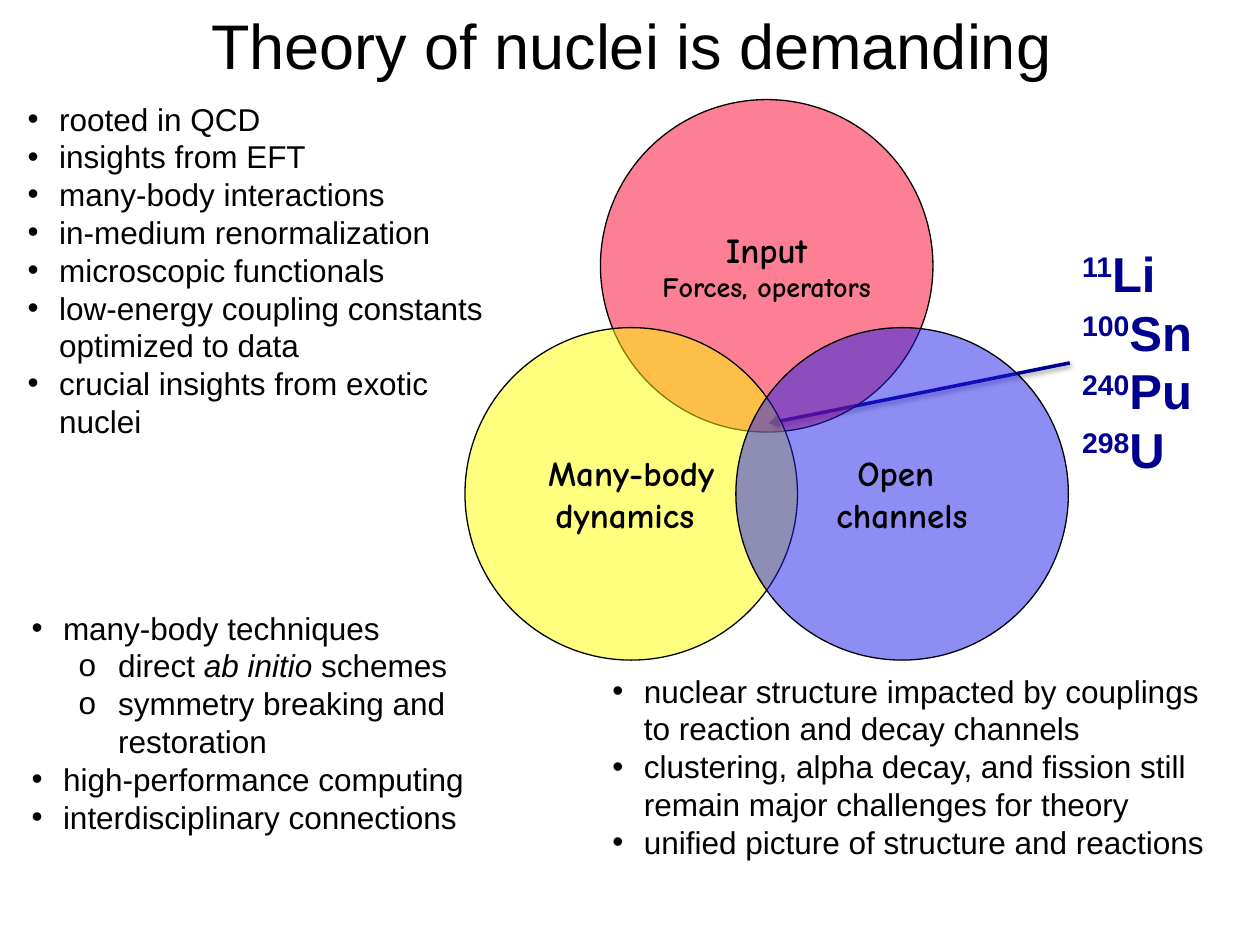
"""Build the slide on the demands of nuclear theory."""
import dataclasses

import lxml.etree
import pptx
import pptx.dml.color
import pptx.enum.shapes
import pptx.enum.text
import pptx.oxml.ns
import pptx.util

Pt = pptx.util.Pt
Align = pptx.enum.text.PP_ALIGN
Anchor = pptx.enum.text.MSO_ANCHOR
qn = pptx.oxml.ns.qn


@dataclasses.dataclass(frozen=True)
class Theme:
    """Hold the colours, fonts and type sizes."""
    ink: str = "000000"
    navy: str = "000090"
    red: str = "FC0128"
    yellow: str = "FFFF00"
    blue: str = "1F1DE8"
    sans: str = "Arial"
    comic: str = "Comic Neue"
    title: int = 36
    symbol: int = 28
    label: int = 20
    body: int = 18
    small: int = 16


THEME = Theme()
DISC = 190
BULLETS = (("•", 18, -18), ("o", 49.5, -22.5))

INPUTS = [
    (0, ["rooted in QCD"]),
    (0, ["insights from EFT"]),
    (0, ["many-body interactions"]),
    (0, ["in-medium renormalization"]),
    (0, ["microscopic functionals"]),
    (0, ["low-energy coupling constants optimized to data"]),
    (0, ["crucial insights from exotic nuclei"]),
]
METHODS = [
    (0, ["many-body techniques"]),
    (1, ["direct ", ("ab initio ", {"italic": True}), "schemes"]),
    (1, ["symmetry breaking and restoration"]),
    (0, ["high-performance computing"]),
    (0, ["interdisciplinary connections"]),
]
OPEN = [
    (0, ["nuclear structure impacted by couplings to reaction and decay channels"]),
    (0, ["clustering, alpha decay, and fission still remain major challenges for theory"]),
    (0, ["unified picture of structure and reactions"]),
]
ISOTOPES = (("11", "Li"), ("100", "Sn"), ("240", "Pu"), ("298", "U"))


def apply(item, values):
    """Set each named attribute on the item."""
    for name, value in values.items():
        setattr(item, name, value)


def tint(color):
    """Turn a hex string into a colour."""
    return pptx.dml.color.RGBColor.from_string(color)


def child(parent, tag, **values):
    """Append an XML element with the given attributes."""
    node = lxml.etree.SubElement(parent, qn(tag))
    for name, value in values.items():
        node.set(name, str(value))
    return node


def place(shape, box):
    """Move and size a shape in points."""
    apply(shape, dict(zip(("left", "top", "width", "height"), map(Pt, box))))


def write(para, text, size, face=THEME.sans, color=THEME.ink, **extra):
    """Add one styled run to a paragraph."""
    run = para.add_run()
    run.text = text
    apply(run.font, {"name": face, "size": Pt(size), "bold": False, **extra})
    run.font.color.rgb = tint(color)
    return run


def lines(frame, count):
    """Yield the first paragraph and then new ones."""
    for index in range(count):
        yield frame.add_paragraph() if index else frame.paragraphs[0]


def fit(frame, wrap, anchor):
    """Set wrapping, anchor and fixed size of a text frame."""
    apply(frame, {
        "word_wrap": wrap,
        "vertical_anchor": anchor,
        "auto_size": pptx.enum.text.MSO_AUTO_SIZE.NONE,
    })


def head(slide, text, box):
    """Fill the title placeholder."""
    shape = slide.shapes.title
    place(shape, box)
    fit(shape.text_frame, False, Anchor.MIDDLE)
    para = shape.text_frame.paragraphs[0]
    para.alignment = Align.CENTER
    write(para, text, THEME.title)


def bullets(shape, items, box):
    """Fill a body placeholder with a two-level list."""
    place(shape, box)
    fit(shape.text_frame, True, Anchor.TOP)
    for para, (level, runs) in zip(lines(shape.text_frame, len(items)), items):
        apply(para, {"level": level, "space_before": Pt(0), "alignment": Align.LEFT})
        mark, left, indent = BULLETS[level]
        props = para._p.get_or_add_pPr()
        props.set("marL", str(int(Pt(left))))
        props.set("indent", str(int(Pt(indent))))
        child(props, "a:buFont", typeface=THEME.sans)
        child(props, "a:buChar", char=mark)
        for run in runs:
            text, extra = (run, {}) if isinstance(run, str) else run
            write(para, text, THEME.body, **extra)


def disc(slide, left, top, color, labels):
    """Draw a half-transparent circle with centred labels."""
    kind = pptx.enum.shapes.MSO_SHAPE.OVAL
    shape = slide.shapes.add_shape(kind, *map(Pt, (left, top, DISC, DISC)))
    shape.shadow.inherit = False
    shape.fill.solid()
    shape.fill.fore_color.rgb = tint(color)
    child(shape.fill._xPr.find(".//" + qn("a:srgbClr")), "a:alpha", val=50000)
    shape.line.color.rgb = tint(THEME.ink)
    shape.line.width = Pt(0.75)
    fit(shape.text_frame, False, Anchor.MIDDLE)
    for para, (text, size) in zip(lines(shape.text_frame, len(labels)), labels):
        para.alignment = Align.CENTER
        write(para, text, size, THEME.comic, bold=True)


def symbols(slide, box):
    """List the isotopes with raised mass numbers."""
    frame = slide.shapes.add_textbox(*map(Pt, box)).text_frame
    fit(frame, False, Anchor.TOP)
    for para, (mass, name) in zip(lines(frame, len(ISOTOPES)), ISOTOPES):
        for text, base in ((mass, 30000), (name, 0)):
            run = write(para, text, THEME.symbol, color=THEME.navy, bold=True)
            run.font._element.set("baseline", str(base))


def arrow(slide, ends):
    """Draw the shadowed arrow into the overlap."""
    kind = pptx.enum.shapes.MSO_CONNECTOR.STRAIGHT
    link = slide.shapes.add_connector(kind, *map(Pt, ends))
    link.line.color.rgb = tint(THEME.navy)
    link.line.width = Pt(2)
    child(link.line._get_or_add_ln(), "a:tailEnd", type="arrow")
    effects = child(link._element.spPr, "a:effectLst")
    shade = child(effects, "a:outerShdw", blurRad=40000, dist=20000, dir=5400000)
    child(child(shade, "a:srgbClr", val=THEME.ink), "a:alpha", val=38000)


def main():
    """Build and save the slide."""
    deck = pptx.Presentation()
    apply(deck, {"slide_width": Pt(720), "slide_height": Pt(540)})
    slide = deck.slides.add_slide(deck.slide_layouts.get_by_name("Comparison"))
    first, second, third, spare = list(slide.placeholders)[1:]
    spare._element.getparent().remove(spare._element)

    head(slide, "Theory of nuclei is demanding", (111, 0, 499.5, 51))
    bullets(first, INPUTS, (8.6, 53.3, 288, 203.8))
    bullets(second, METHODS, (10.8, 344.2, 321.8, 138.2))
    bullets(third, OPEN, (342.7, 380.2, 365, 116.6))
    symbols(slide, (611.3, 135.4, 82, 143.3))
    arrow(slide, (611.3, 207.4, 439.2, 241.9))

    west, east, low = 265.7, 420.5, 187.2
    size = THEME.label
    disc(slide, (west + east) / 2, 56.9, THEME.red,
         [("Input", size), ("Forces, operators", THEME.small)])
    disc(slide, west, low, THEME.yellow, [("Many-body", size), ("dynamics ", size)])
    disc(slide, east, low, THEME.blue, [("Open ", size), ("channels", size)])
    deck.save("out.pptx")


if __name__ == "__main__":
    main()
